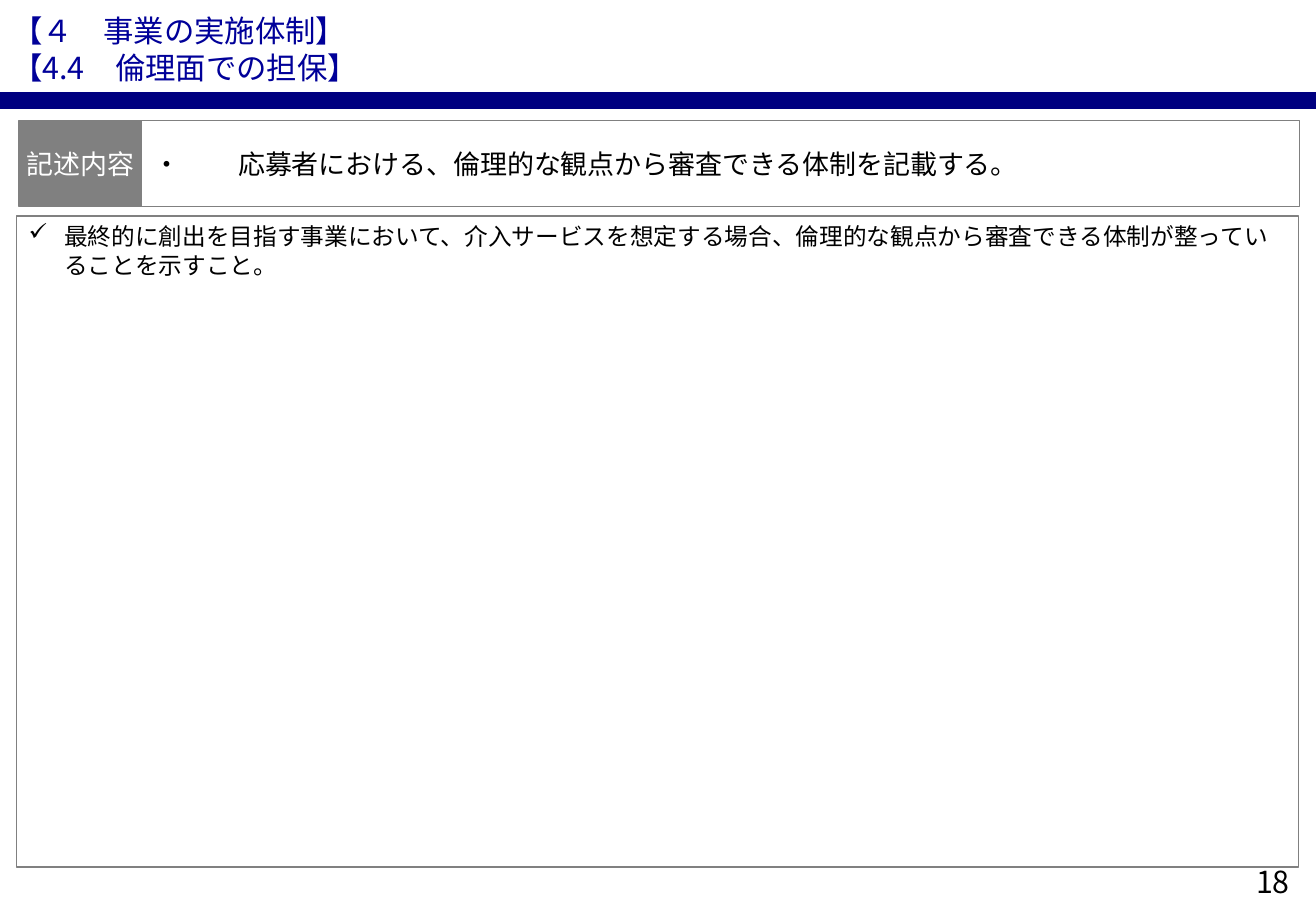
from lxml.etree import SubElement
from pptx import Presentation
from pptx.dml.color import RGBColor
from pptx.enum.shapes import MSO_CONNECTOR, MSO_SHAPE
from pptx.enum.text import MSO_ANCHOR, MSO_AUTO_SIZE, PP_ALIGN
from pptx.oxml.ns import qn
from pptx.util import Cm, Pt

FONT = "Noto Sans CJK JP"
NAVY = RGBColor(0x00, 0x00, 0x80)
BLUE = RGBColor(0x00, 0x00, 0x99)
GRAY = RGBColor(0x80, 0x80, 0x80)
WHITE = RGBColor(0xFF, 0xFF, 0xFF)
BLACK = RGBColor(0x00, 0x00, 0x00)

WIDTH, HEIGHT = Cm(27.51), Cm(19.05)


def write(frame, text, size, color, align=PP_ALIGN.LEFT,
          anchor=MSO_ANCHOR.TOP, wrap=True):
    """Fill a text frame; each line of text becomes a paragraph."""
    frame.text = text
    frame.auto_size = MSO_AUTO_SIZE.NONE
    frame.vertical_anchor = anchor
    frame.word_wrap = wrap
    for para in frame.paragraphs:
        para.alignment = align
        font = para.font
        font.size = Pt(size)
        font.color.rgb = color
        font.name = FONT
        base = para._p.pPr.find(qn("a:defRPr"))
        SubElement(base, qn("a:ea")).set("typeface", FONT)


def hang(para, indent, mark=None):
    """Give a paragraph a hanging indent and, if asked, a bullet."""
    props = para._p.get_or_add_pPr()
    props.set("marL", str(indent))
    props.set("indent", str(-indent))
    if mark:
        bullet = SubElement(props, qn("a:buChar"))
        bullet.set("char", mark)
        props.insert(0, bullet)


def add_title(slide, text):
    title = slide.shapes.title
    title.left, title.top = Cm(0), Cm(0.13)
    title.width, title.height = WIDTH, Cm(1.8)
    write(title.text_frame, text, 18, BLUE)


def add_rule(slide, top):
    rule = slide.shapes.add_connector(
        MSO_CONNECTOR.STRAIGHT, Cm(0), top, WIDTH, top)
    rule.line.color.rgb = NAVY
    rule.line.width = Pt(10)
    SubElement(rule._element.spPr, qn("a:effectLst"))


def add_panel(slide, left, top, width, height, fill):
    """Add a gray-edged box and return its text frame."""
    panel = slide.shapes.add_shape(
        MSO_SHAPE.RECTANGLE, left, top, width, height)
    panel.shadow.inherit = False
    panel.fill.solid()
    panel.fill.fore_color.rgb = fill
    panel.line.color.rgb = GRAY
    panel.line.width = Pt(0.75)
    return panel.text_frame


def add_number(slide, text):
    box = slide.shapes.add_textbox(Cm(25.76), Cm(17.93), Cm(1.7), Cm(1.02))
    write(box.text_frame, text, 18, BLACK, PP_ALIGN.CENTER)


def main():
    deck = Presentation()
    deck.slide_width, deck.slide_height = WIDTH, HEIGHT
    slide = deck.slides.add_slide(deck.slide_layouts[5])

    add_rule(slide, Cm(2.11))
    add_number(slide, "18")
    add_title(slide, "【４　事業の実施体制】\n【4.4　倫理面での担保】")

    top, height = Cm(2.52), Cm(1.8)
    label = add_panel(slide, Cm(0.4), top, Cm(2.56), height, GRAY)
    write(label, "記述内容", 16, WHITE, PP_ALIGN.CENTER,
          MSO_ANCHOR.MIDDLE, wrap=False)

    topic = add_panel(slide, Cm(2.96), top, Cm(24.2), height, WHITE)
    write(topic, "・\t応募者における、倫理的な観点から審査できる体制を記載する。",
          16, BLACK, anchor=MSO_ANCHOR.MIDDLE, wrap=False)
    hang(topic.paragraphs[0], Cm(0.5))

    body = add_panel(slide, Cm(0.35), Cm(4.52), Cm(26.8), Cm(13.61), WHITE)
    write(body, "最終的に創出を目指す事業において、介入サービスを想定する場合、"
          "倫理的な観点から審査できる体制が整っていることを示すこと。", 14, BLACK)
    hang(body.paragraphs[0], Cm(0.74), "✓")

    deck.save("out.pptx")


if __name__ == "__main__":
    main()
